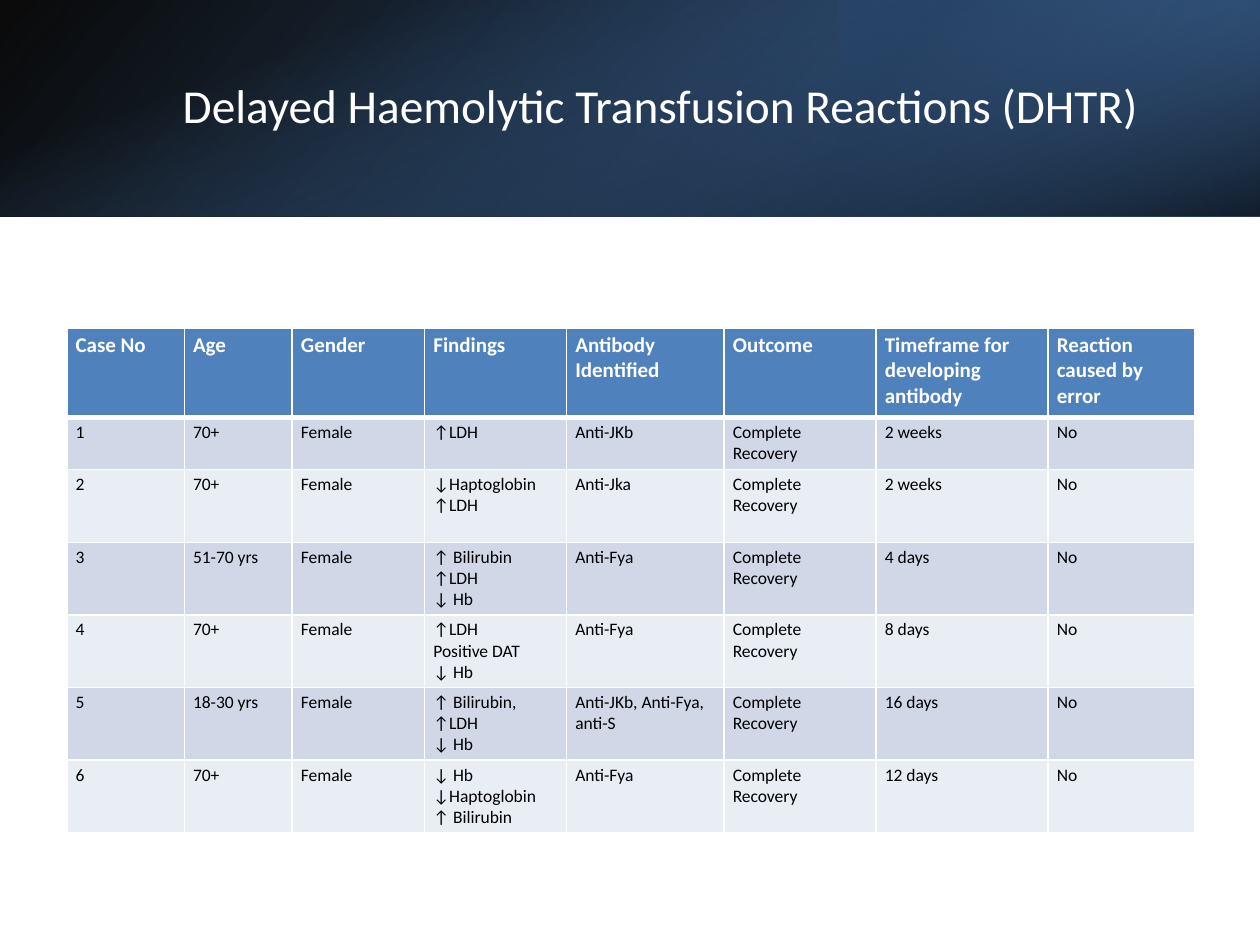
import pptx
import pptx.dml.color
import pptx.enum.shapes
import pptx.enum.text
import pptx.oxml
import pptx.oxml.ns
import pptx.util
import lxml.etree

TITLE = "Delayed Haemolytic Transfusion Reactions (DHTR)"
HEADERS = [
    "Case No", "Age", "Gender", "Findings", "Antibody Identified", "Outcome",
    "Timeframe for developing antibody", "Reaction caused by error",
]
CASES = [
    ("70+", "↑LDH", "Anti-JKb", "2 weeks"),
    ("70+", "↓Haptoglobin\n↑LDH", "Anti-Jka", "2 weeks"),
    ("51-70 yrs", "↑ Bilirubin\n↑LDH\n↓ Hb", "Anti-Fya", "4 days"),
    ("70+", "↑LDH\nPositive DAT\n↓ Hb", "Anti-Fya", "8 days"),
    ("18-30 yrs", "↑ Bilirubin,\n↑LDH\n↓ Hb", "Anti-JKb, Anti-Fya, anti-S", "16 days"),
    ("70+", "↓ Hb\n↓Haptoglobin\n↑ Bilirubin", "Anti-Fya", "12 days"),
]
GENDER, OUTCOME, CAUSED_BY_ERROR = "Female", "Complete\nRecovery", "No"

THEME = {
    "font": "Calibri",
    "title_size": 27, "header_size": 12, "body_size": 10,
    "white": "FFFFFF", "black": "000000",
    "accent": "4F81BD", "accent_dark": "376092", "accent_darker": "254061",
    "row_fills": ("D0D8E8", "E9EDF4"),
}

SLIDE_WIDTH, SLIDE_HEIGHT, BANNER_HEIGHT = 720, 540, 124
GLOW_WIDTH = 240
BANNER_LAYERS = [
    {"box": (0, 0, SLIDE_WIDTH, BANNER_HEIGHT), "rotation": 0, "flip": True, "angle": 140,
     "stops": [(0, "black", 96), (100, "accent_dark", 100)]},
    {"box": (SLIDE_WIDTH - GLOW_WIDTH, 0, GLOW_WIDTH, BANNER_HEIGHT),
     "rotation": 180, "flip": True, "angle": 320,
     "stops": [(19, "accent_darker", 68), (100, "accent", 79)]},
    {"box": ((SLIDE_WIDTH - BANNER_HEIGHT) / 2, (BANNER_HEIGHT - SLIDE_WIDTH) / 2,
             BANNER_HEIGHT, SLIDE_WIDTH),
     "rotation": 90, "flip": False, "angle": 340,
     "stops": [(23, "accent", 0), (99, "black", 74)]},
]
TITLE_BOX = (80.5, 27.5, 593.5, 69)
TABLE_LEFT, TABLE_TOP = 38.2, 187.4
COLUMN_WIDTHS = [67.1, 61.7, 75.7, 81.1, 90, 86.9, 98.3, 83.9]
ROW_HEIGHTS = [51, 30] + [41.5] * 5
CELL_INSETS = (5, 2.5)


def points(values):
    return [pptx.util.Pt(value) for value in values]


def rgb(value):
    return pptx.dml.color.RGBColor.from_string(value)


def write_text(frame, text, size, color, bold=False, align="LEFT", spacing=None):
    for index, line in enumerate(text.split("\n")):
        paragraph = frame.paragraphs[0] if index == 0 else frame.add_paragraph()
        paragraph.alignment = getattr(pptx.enum.text.PP_ALIGN, align)
        if spacing:
            paragraph.line_spacing = spacing
        run = paragraph.add_run()
        run.text = line
        run.font.name = THEME["font"]
        run.font.size = pptx.util.Pt(size)
        run.font.bold = bold
        run.font.color.rgb = rgb(color)


def add_banner_layer(slide, layer):
    shape = slide.shapes.add_shape(
        pptx.enum.shapes.MSO_SHAPE.RECTANGLE, *points(layer["box"]))
    shape.shadow.inherit = False
    shape.line.fill.background()
    shape.rotation = layer["rotation"]
    if layer["flip"]:
        shape._element.spPr.find(pptx.oxml.ns.qn("a:xfrm")).set("flipH", "1")
    shape.fill.gradient()
    shape.fill.gradient_angle = 360 - layer["angle"]
    for stop, (position, color, opacity) in zip(shape.fill.gradient_stops, layer["stops"]):
        stop.position = position / 100
        stop.color.rgb = rgb(THEME[color])
    color_elements = shape._element.spPr.iter(pptx.oxml.ns.qn("a:srgbClr"))
    for element, (_, _, opacity) in zip(list(color_elements), layer["stops"]):
        alpha = lxml.etree.SubElement(element, pptx.oxml.ns.qn("a:alpha"))
        alpha.set("val", str(opacity * 1000))


def set_borders(cell, widths):
    properties = cell._tc.get_or_add_tcPr()
    for side, width in widths.items():
        properties.append(pptx.oxml.parse_xml(
            f'<a:ln{side} {pptx.oxml.ns.nsdecls("a")} w="{pptx.util.Pt(width)}">'
            f'<a:solidFill><a:srgbClr val="{THEME["white"]}"/></a:solidFill></a:ln{side}>'))


def format_cell(cell, text, row_index):
    is_header = row_index == 0
    cell.margin_left = cell.margin_right = pptx.util.Pt(CELL_INSETS[0])
    cell.margin_top = cell.margin_bottom = pptx.util.Pt(CELL_INSETS[1])
    set_borders(cell, {"L": 1, "R": 1, "T": 3 if row_index == 1 else 1,
                       "B": 3 if is_header else 1})
    cell.fill.solid()
    cell.fill.fore_color.rgb = rgb(
        THEME["accent"] if is_header else THEME["row_fills"][(row_index - 1) % 2])
    write_text(cell.text_frame, text,
               size=THEME["header_size" if is_header else "body_size"],
               color=THEME["white" if is_header else "black"], bold=is_header)


def add_case_table(slide):
    rows = [HEADERS] + [
        (str(number), age, GENDER, findings, antibody, OUTCOME, timeframe, CAUSED_BY_ERROR)
        for number, (age, findings, antibody, timeframe) in enumerate(CASES, 1)]
    box = (TABLE_LEFT, TABLE_TOP, sum(COLUMN_WIDTHS), sum(ROW_HEIGHTS))
    table = slide.shapes.add_table(len(rows), len(HEADERS), *points(box)).table
    for column, width in zip(table.columns, points(COLUMN_WIDTHS)):
        column.width = width
    for row, height in zip(table.rows, points(ROW_HEIGHTS)):
        row.height = height
    for row_index, row in enumerate(rows):
        for column_index, text in enumerate(row):
            format_cell(table.cell(row_index, column_index), text, row_index)


def add_title(slide):
    title = slide.shapes.title
    title.left, title.top, title.width, title.height = points(TITLE_BOX)
    slide.shapes._spTree.append(title._element)
    frame = title.text_frame
    frame.word_wrap = True
    frame.auto_size = pptx.enum.text.MSO_AUTO_SIZE.NONE
    frame.vertical_anchor = pptx.enum.text.MSO_ANCHOR.MIDDLE
    write_text(frame, TITLE, size=THEME["title_size"], color=THEME["white"],
               align="CENTER", spacing=0.9)


def main():
    presentation = pptx.Presentation()
    presentation.slide_width, presentation.slide_height = points((SLIDE_WIDTH, SLIDE_HEIGHT))
    slide = presentation.slides.add_slide(presentation.slide_layouts[5])
    slide.background.fill.solid()
    slide.background.fill.fore_color.rgb = rgb(THEME["white"])
    for layer in BANNER_LAYERS:
        add_banner_layer(slide, layer)
    add_title(slide)
    add_case_table(slide)
    presentation.save("out.pptx")


if __name__ == "__main__":
    main()
